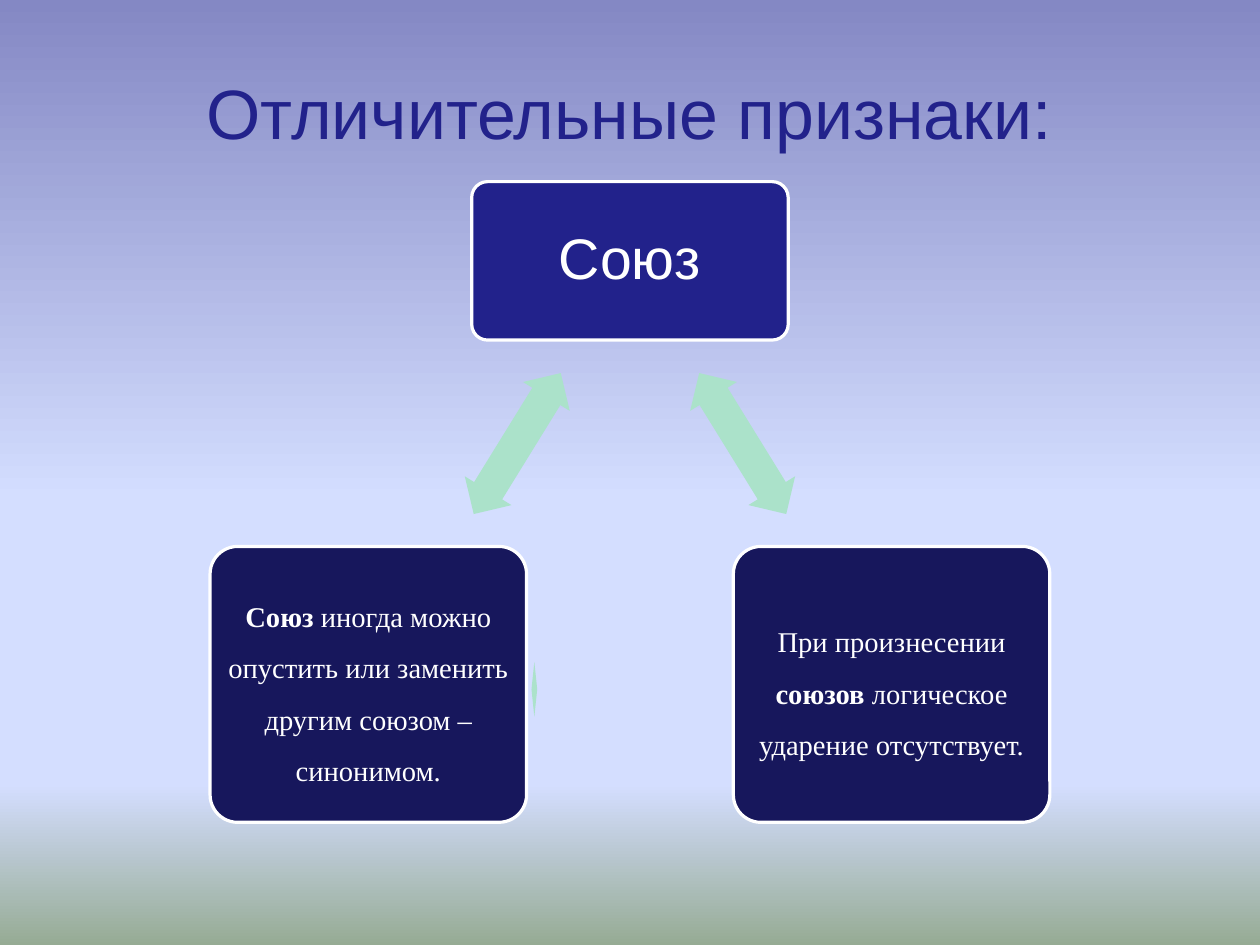
"""Build a slide on the distinguishing features of conjunctions."""
from dataclasses import dataclass

from lxml import etree
from pptx import Presentation
from pptx import util as u
from pptx.dml.color import RGBColor
from pptx.enum import shapes, text
from pptx.oxml.ns import qn

SLIDE_WIDTH, SLIDE_HEIGHT = 793.7, 595.28
CENTER = SLIDE_WIDTH / 2
BRANCH_OFFSET = 164.8
BOX_WIDTH = 199.4
ARROW_HEIGHT = 34.6
NAVY, DARK_NAVY, MINT, WHITE = "22228B", "17175C", "ABE2CA", "FFFFFF"
BACKGROUND_STOPS = [(0, "8488C4"), (53, "D4DEFF"), (83, "D4DEFF"), (100, "96AB94")]


@dataclass
class Run:
    text: str
    bold: bool = False


@dataclass
class Box:
    center: float
    top: float
    height: float
    fill: str
    runs: list[Run]
    font: str
    size: float
    spacing: float
    margin: float


@dataclass
class Arrow:
    center: float
    top: float
    width: float
    rotation: float


BOXES = [
    Box(CENTER, 114.4, 99.8, NAVY, [Run("Союз")], "Arial", 36, 0.9, 10.8),
    Box(CENTER + BRANCH_OFFSET, 344.2, 173.8, DARK_NAVY,
        [Run("При произнесении "), Run("союзов", True),
         Run(" логическое ударение отсутствует.")],
        "Times New Roman", 18, 1.5, 5.2),
    Box(CENTER - BRANCH_OFFSET, 344.2, 173.8, DARK_NAVY,
        [Run("Союз ", True),
         Run("иногда можно опустить или заменить другим союзом – синонимом.")],
        "Times New Roman", 18, 1.5, 5.2),
]
ARROWS = [
    Arrow(CENTER + 71, 262.1, 104.4, 58.3),
    Arrow(CENTER - 71, 262.1, 104.4, 301.7),
    Arrow(336.6, 416.9, 3.6, 0),
]


def color(value: str) -> RGBColor:
    return RGBColor.from_string(value)


def format_paragraph(paragraph, font: str, size: float, value: str, spacing: float) -> None:
    paragraph.alignment = text.PP_ALIGN.CENTER
    paragraph.line_spacing = spacing
    for run in paragraph.runs:
        run.font.name = font
        run.font.size = u.Pt(size)
        run.font.color.rgb = color(value)


def set_margins(frame, margin: float) -> None:
    frame.margin_left = frame.margin_right = u.Pt(margin)
    frame.margin_top = frame.margin_bottom = u.Pt(margin)
    frame.vertical_anchor = text.MSO_ANCHOR.MIDDLE
    frame.word_wrap = True


def paint_background(slide) -> None:
    fill = slide.background.fill
    fill.gradient()
    fill.gradient_angle = 270
    stop_list = slide.element.find(".//" + qn("a:gsLst"))
    for stop in list(stop_list):
        stop_list.remove(stop)
    for percent, value in BACKGROUND_STOPS:
        stop = etree.SubElement(stop_list, qn("a:gs"), pos=str(percent * 1000))
        etree.SubElement(stop, qn("a:srgbClr"), val=value)


def add_title(slide) -> None:
    title = slide.shapes.title
    title.left, title.top = u.Pt(39.6), u.Pt(23.6)
    title.width, title.height = u.Pt(714.2), u.Pt(99.4)
    frame = title.text_frame
    frame.text = "Отличительные признаки:"
    frame.auto_size = text.MSO_AUTO_SIZE.NONE
    set_margins(frame, 0)
    format_paragraph(frame.paragraphs[0], "Arial", 44, NAVY, 0.93)


def add_filled_shape(slide, kind, center: float, top: float, width: float,
                     height: float, fill: str):
    shape = slide.shapes.add_shape(
        kind, u.Pt(center - width / 2), u.Pt(top), u.Pt(width), u.Pt(height))
    shape.shadow.inherit = False
    shape.fill.solid()
    shape.fill.fore_color.rgb = color(fill)
    return shape


def add_box(slide, box: Box) -> None:
    shape = add_filled_shape(slide, shapes.MSO_SHAPE.ROUNDED_RECTANGLE,
                             box.center, box.top, BOX_WIDTH, box.height, box.fill)
    shape.adjustments[0] = 0.1
    shape.line.color.rgb = color(WHITE)
    shape.line.width = u.Pt(2)
    set_margins(shape.text_frame, box.margin)
    paragraph = shape.text_frame.paragraphs[0]
    for part in box.runs:
        run = paragraph.add_run()
        run.text = part.text
        run.font.bold = part.bold
    format_paragraph(paragraph, box.font, box.size, WHITE, box.spacing)


def add_arrow(slide, arrow: Arrow) -> None:
    shape = add_filled_shape(slide, shapes.MSO_SHAPE.LEFT_RIGHT_ARROW,
                             arrow.center, arrow.top, arrow.width, ARROW_HEIGHT, MINT)
    shape.adjustments[0] = 0.6
    shape.adjustments[1] = 0.5
    shape.rotation = arrow.rotation
    shape.line.fill.background()


def main() -> None:
    presentation = Presentation()
    presentation.slide_width = u.Pt(SLIDE_WIDTH)
    presentation.slide_height = u.Pt(SLIDE_HEIGHT)
    slide = presentation.slides.add_slide(presentation.slide_layouts[5])
    paint_background(slide)
    add_title(slide)
    for arrow in ARROWS:
        add_arrow(slide, arrow)
    for box in BOXES:
        add_box(slide, box)
    presentation.save("out.pptx")


if __name__ == "__main__":
    main()
